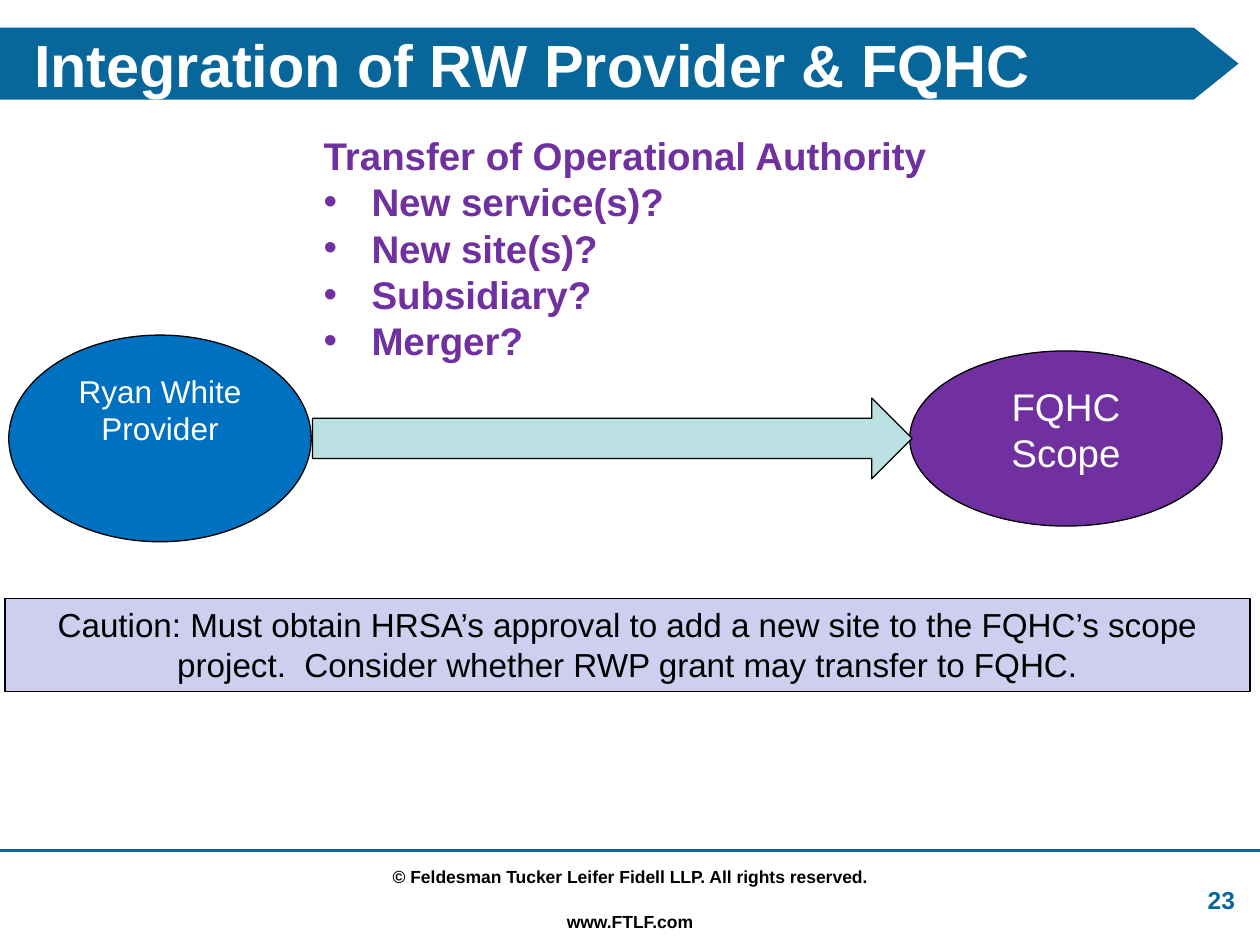
from dataclasses import dataclass

from lxml.etree import SubElement
from pptx import Presentation
from pptx.dml.color import RGBColor
from pptx.enum.shapes import MSO_CONNECTOR, MSO_SHAPE as Shape
from pptx.enum.text import MSO_ANCHOR as Anchor, PP_ALIGN as Align
from pptx.oxml.ns import qn
from pptx.util import Inches, Pt


@dataclass(frozen=True)
class Theme:
    font: str = "Arial"
    brand: str = "08679A"
    purple: str = "7030A0"
    blue: str = "0070C0"
    arrow: str = "BBE0E3"
    lavender: str = "CECEEF"
    black: str = "000000"
    white: str = "FFFFFF"
    title_size: int = 34
    large_size: int = 22
    caution_size: int = 19
    provider_size: int = 18
    number_size: int = 14
    footer_size: int = 10
    outline: float = 0.75
    rule: float = 1.5


THEME = Theme()


def inches(box):
    return [Inches(value) for value in box]


def add_text(paragraph, text, size, color, bold=False, align=Align.LEFT):
    """Write text into a paragraph, with a line break at each newline."""
    paragraph.alignment = align
    for index, line in enumerate(text.split("\n")):
        if index:
            paragraph.add_line_break()
        run = paragraph.add_run()
        run.text = line
        run.font.name = THEME.font
        run.font.size = Pt(size)
        run.font.bold = bold
        run.font.color.rgb = RGBColor.from_string(color)


def add_filled_shape(slide, kind, box, fill, outlined=True):
    shape = slide.shapes.add_shape(kind, *inches(box))
    shape.shadow.inherit = False
    shape.fill.solid()
    shape.fill.fore_color.rgb = RGBColor.from_string(fill)
    if outlined:
        shape.line.color.rgb = RGBColor.from_string(THEME.black)
        shape.line.width = Pt(THEME.outline)
    else:
        shape.line.fill.background()
    return shape


def add_label(shape, text, size, color):
    frame = shape.text_frame
    frame.word_wrap = True
    frame.vertical_anchor = Anchor.TOP
    add_text(frame.paragraphs[0], text, size, color, align=Align.CENTER)


def add_text_frame(slide, box, anchor=Anchor.TOP):
    frame = slide.shapes.add_textbox(*inches(box)).text_frame
    frame.word_wrap = True
    frame.vertical_anchor = anchor
    return frame


def add_bullet(paragraph, indent):
    properties = paragraph._p.get_or_add_pPr()
    properties.set("marL", str(Inches(indent)))
    properties.set("indent", str(-Inches(indent)))
    SubElement(properties, qn("a:buFont"), typeface=THEME.font)
    SubElement(properties, qn("a:buChar"), char="•")


def add_title(slide, box, text):
    left, top, width, height = box
    banner = add_filled_shape(slide, Shape.PENTAGON, (0, top + 0.05, width + 0.5, height - 0.1),
                              THEME.brand, outlined=False)
    banner.adjustments[0] = 0.622
    title = slide.shapes.title
    title.left, title.top, title.width, title.height = inches(box)
    title.text_frame.word_wrap = True
    title.text_frame.vertical_anchor = Anchor.BOTTOM
    add_text(title.text_frame.paragraphs[0], text, THEME.title_size, THEME.white, bold=True)
    banner.element.addnext(title.element)  # the title stands in front of its banner


def add_transfer_list(slide, box, heading, questions):
    frame = add_text_frame(slide, box)
    add_text(frame.paragraphs[0], heading, THEME.large_size, THEME.purple, bold=True)
    for question in questions:
        paragraph = frame.add_paragraph()
        add_bullet(paragraph, 0.38)
        add_text(paragraph, question, THEME.large_size, THEME.purple, bold=True)


def add_integration_flow(slide, box):
    """Place the provider and the FQHC at the two ends of an arrow."""
    left, top, width, height = box
    middle = top + height / 2
    provider_width, scope_width = 2.4, 2.48
    scope_height, arrow_height = 1.39, 0.64

    scope = add_filled_shape(
        slide, Shape.OVAL,
        (left + width - scope_width, middle - scope_height / 2, scope_width, scope_height),
        THEME.purple)
    add_label(scope, "FQHC\nScope", THEME.large_size, THEME.white)

    provider = add_filled_shape(slide, Shape.OVAL, (left, top, provider_width, height), THEME.blue)
    add_label(provider, "Ryan White Provider", THEME.provider_size, THEME.white)

    add_filled_shape(
        slide, Shape.RIGHT_ARROW,
        (left + provider_width + 0.01, middle - arrow_height / 2,
         width - provider_width - scope_width + 0.01, arrow_height),
        THEME.arrow)


def add_caution(slide, box, text):
    caution = add_filled_shape(slide, Shape.RECTANGLE, box, THEME.lavender)
    add_label(caution, text, THEME.caution_size, THEME.black)


def add_footer(slide, box, number):
    left, top, width, height = box
    rule = slide.shapes.add_connector(
        MSO_CONNECTOR.STRAIGHT, *inches((left, top, left + width, top)))
    rule.line.color.rgb = RGBColor.from_string(THEME.brand)
    rule.line.width = Pt(THEME.rule)
    SubElement(rule.element.spPr, qn("a:effectLst"))

    center = left + width / 2
    lines = [("© Feldesman Tucker Leifer Fidell LLP. All rights reserved.", 5.08, 0.07),
             ("www.FTLF.com", 2, 0.43)]
    for text, line_width, offset in lines:
        frame = add_text_frame(
            slide, (center - line_width / 2, top + offset, line_width, 0.27), Anchor.MIDDLE)
        add_text(frame.paragraphs[0], text, THEME.footer_size, THEME.black,
                 bold=True, align=Align.CENTER)

    frame = add_text_frame(slide, (left + width - 0.68, top + 0.13, 0.58, 0.52), Anchor.MIDDLE)
    add_text(frame.paragraphs[0], number, THEME.number_size, THEME.brand,
             bold=True, align=Align.RIGHT)


def main():
    presentation = Presentation()
    presentation.slide_width, presentation.slide_height = inches((10, 7.5))
    slide = presentation.slides.add_slide(presentation.slide_layouts[5])
    add_title(slide, (0.17, 0.17, 9.33, 0.67), "Integration of RW Provider & FQHC")
    add_footer(slide, (0, 6.75, 10, 0.75), "23")
    add_integration_flow(slide, (0.07, 2.66, 9.63, 1.64))
    add_transfer_list(slide, (2.47, 1, 6.42, 1.95), "Transfer of Operational Authority",
                      ["New service(s)?", "New site(s)?", "Subsidiary?", "Merger?"])
    add_caution(slide, (0.04, 4.75, 9.88, 0.74),
                "Caution: Must obtain HRSA’s approval to add a new site to the FQHC’s scope "
                "project.  Consider whether RWP grant may transfer to FQHC.")
    presentation.save("out.pptx")


if __name__ == "__main__":
    main()
